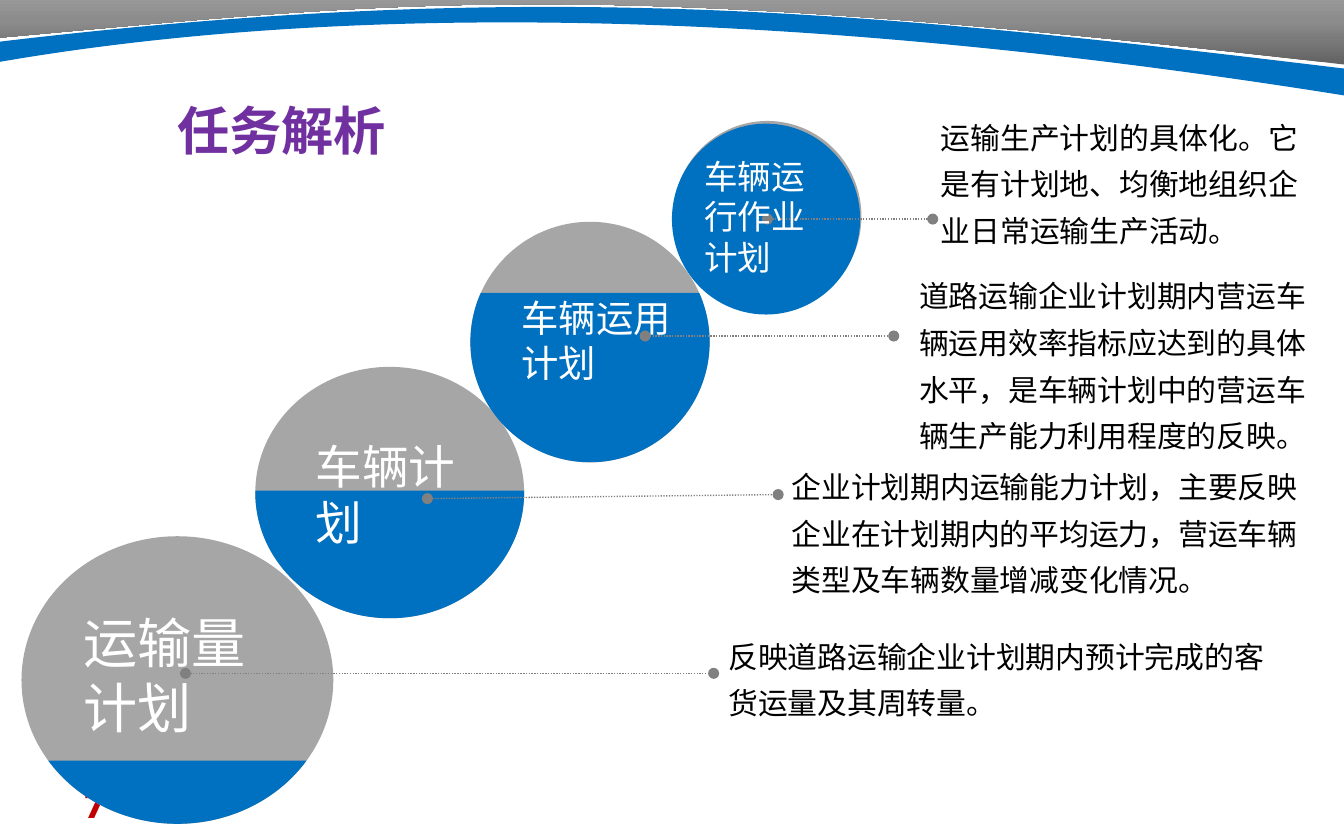
from copy import deepcopy
from math import asin, cos, pi, sin, tan

from lxml import etree
from pptx import Presentation
from pptx.dml.color import RGBColor
from pptx.enum.dml import MSO_LINE_DASH_STYLE as DASH
from pptx.enum.shapes import MSO_CONNECTOR as CONNECTOR, MSO_SHAPE as SHAPE
from pptx.enum.text import MSO_ANCHOR as ANCHOR
from pptx.oxml import parse_xml
from pptx.oxml.ns import nsdecls, qn
from pptx.util import Inches, Pt

BLUE = RGBColor(0x00, 0x70, 0xC0)
LIGHT_GRAY = RGBColor(0xA6, 0xA6, 0xA6)
MID_GRAY = RGBColor(0x8C, 0x8C, 0x8C)
DARK_GRAY = RGBColor(0x62, 0x62, 0x62)
LINE_GRAY = RGBColor(0x80, 0x80, 0x80)
PURPLE = RGBColor(0x70, 0x30, 0xA0)
RED = RGBColor(0xC0, 0x00, 0x00)
WHITE = RGBColor(0xFF, 0xFF, 0xFF)
BLACK = RGBColor(0x00, 0x00, 0x00)
CJK_FONT, BODY_FONT = "Noto Sans CJK SC", "DejaVu Sans"

prs = Presentation()
prs.slide_width, prs.slide_height = Inches(10), Inches(6.25)
s = prs.slides.add_slide(prs.slide_layouts[6])


def add_outline(start, segments, color):
    """Add a closed shape; a segment of one point is a line, of three a Bezier curve."""
    points = [(Inches(x), Inches(y)) for segment in segments for x, y in segment]
    builder = s.shapes.build_freeform(Inches(start[0]), Inches(start[1]))
    builder.add_line_segments(points, close=True)
    sp = builder.convert_to_shape()
    lines = iter(list(sp._element.iter(qn("a:lnTo"))))
    for segment in segments:
        first = next(lines)
        if len(segment) == 3:
            first.tag = qn("a:cubicBezTo")
            for line in (next(lines), next(lines)):
                first.append(line[0])
                line.getparent().remove(line)
    sp.shadow.inherit = False
    sp.fill.solid()
    sp.fill.fore_color.rgb = color
    sp.line.fill.background()
    return sp


def add_text(box, text, size, font, color, bold=False, inset=0.11, anchor=ANCHOR.TOP, spacing=None):
    sp = s.shapes.add_textbox(*map(Inches, box))
    tf = sp.text_frame
    tf.word_wrap = True
    tf.vertical_anchor = anchor
    tf.margin_left = tf.margin_right = Inches(inset)
    tf.text = text
    p = tf.paragraphs[0]
    p.line_spacing = spacing
    r = p.runs[0]
    r.font.size, r.font.name, r.font.bold = Pt(size), font, bold
    r.font.color.rgb = color
    east_asian = etree.SubElement(r.font._element, qn("a:ea"))
    east_asian.set("typeface", BODY_FONT)
    return sp


add_text((0.52, 5.79, 2.33, 0.33), "7", 18, BODY_FONT, RED, bold=True, inset=0.1)

# Header bands
gray_band = add_outline(
    (10, 0.48),
    [[(4.43, -0.17), (3.08, 0), (0, 0.28)], [(0, 0.19)], [(0, -0.02)], [(10, -0.02)], [(10, 0.48)]],
    LIGHT_GRAY)
gray_band.fill.gradient()
gray_band.fill.gradient_angle = 90
first_stop = gray_band.fill.gradient_stops[0]._gs
first_stop.addnext(deepcopy(first_stop))
stops = gray_band.fill.gradient_stops
for stop, position, color in zip(stops, (0, 0.5, 1), (DARK_GRAY, MID_GRAY, LIGHT_GRAY)):
    stop.position = position
    stop.color.rgb = color
gray_band._element.spPr.find(qn("a:effectLst")).append(parse_xml(
    f'<a:outerShdw {nsdecls("a")} blurRad="0" dist="25400" dir="5400000" algn="t" rotWithShape="0">'
    '<a:srgbClr val="FFFFFF"/></a:outerShdw>'))
add_outline(
    (0, 0.31),
    [[(4.03, -0.17), (6.52, 0.09), (10, 0.51)], [(10, 0.71)],
     [(6.05, 0.08), (2.67, 0), (0, 0.46)], [(0, 0.31)]],
    BLUE)

add_text((1.22, 0.68, 3.7, 0.57), "任务解析", 28, CJK_FONT, PURPLE, bold=True, inset=0.1)

# Circle box, blue level, label, label box, label size, line ends, description, its box
stages = [
    ((0.16, 3.99, 2.32, 2.14), 5.66, "运输量计划", (0.51, 4.48, 1.48, 1.08), 29,
     (1.38, 5.01, 5.31, 5.01), "反映道路运输企业计划期内预计完成的客货运量及其周转量。",
     (5.31, 4.62, 4.42, 0.77)),
    ((1.9, 2.73, 2, 1.87), 3.65, "车辆计划", (2.24, 3.2, 1.37, 0.95), 25,
     (3.18, 3.71, 5.79, 3.68),
     "企业计划期内运输能力计划，主要反映企业在计划期内的平均运力，营运车辆类型及车辆数量增减变化情况。",
     (5.78, 3.36, 4.03, 1.16)),
    ((3.5, 1.65, 1.78, 1.79), 2.18, "车辆运用计划", (3.77, 2.14, 1.45, 0.78), 20,
     (4.8, 2.5, 6.65, 2.5),
     "道路运输企业计划期内营运车辆运用效率指标应达到的具体水平，是车辆计划中的营运车辆生产能力利用程度的反映。",
     (6.73, 1.94, 3.27, 1.51)),
    ((5.01, 0.9, 1.4, 1.42), None, "车辆运行作业计划", (5.13, 1.1, 1.13, 1.02), 18,
     (5.71, 1.63, 6.94, 1.63),
     "运输生产计划的具体化。它是有计划地、均衡地组织企业日常运输生产活动。",
     (6.89, 0.76, 2.99, 1.16)),
]

for circle, level, label, label_box, size, ends, description, description_box in stages:
    left, top, width, height = circle
    ellipses = [(circle, LIGHT_GRAY)]
    if level is None:
        ellipses.append(((left - 0.01, top + 0.02, width, height), BLUE))
    for box, color in ellipses:
        sp = s.shapes.add_shape(SHAPE.OVAL, *map(Inches, box))
        sp.shadow.inherit = False
        sp.fill.solid()
        sp.fill.fore_color.rgb = color
        sp.line.fill.background()
    if level is not None:
        # The blue level is a chord closed by arcs that meet at the quadrants
        rx, ry = width / 2, height / 2
        cx, cy = left + rx, top + ry
        start = asin((level - cy) / ry)
        angles = [start, pi / 2, pi - start]
        if start < 0:
            angles = [start, 0, pi / 2, pi, pi - start]
        segments = [[(cx + rx * cos(start), level)]]
        for a, b in zip(angles, angles[1:]):
            k = 4 / 3 * tan((b - a) / 4)
            segments.append([
                (cx + rx * (cos(a) - k * sin(a)), cy + ry * (sin(a) + k * cos(a))),
                (cx + rx * (cos(b) + k * sin(b)), cy + ry * (sin(b) - k * cos(b))),
                (cx + rx * cos(b), cy + ry * sin(b))])
        add_outline((cx - rx * cos(start), level), segments, BLUE)

    label_shape = add_text(label_box, label, size, CJK_FONT, WHITE, anchor=ANCHOR.MIDDLE)

    line = s.shapes.add_connector(CONNECTOR.STRAIGHT, *map(Inches, ends))
    line.line.color.rgb = LINE_GRAY
    line.line.width = Pt(0.75)
    line.line.dash_style = DASH.ROUND_DOT
    ln = line.line._get_or_add_ln()
    for end in ("a:headEnd", "a:tailEnd"):
        etree.SubElement(ln, qn(end)).set("type", "oval")
    etree.SubElement(line._element.spPr, qn("a:effectLst"))

    add_text(description_box, description, 16, BODY_FONT, BLACK, spacing=1.3)

# The top label lies in front of its line
label_shape._element.getparent().append(label_shape._element)

prs.save("out.pptx")
